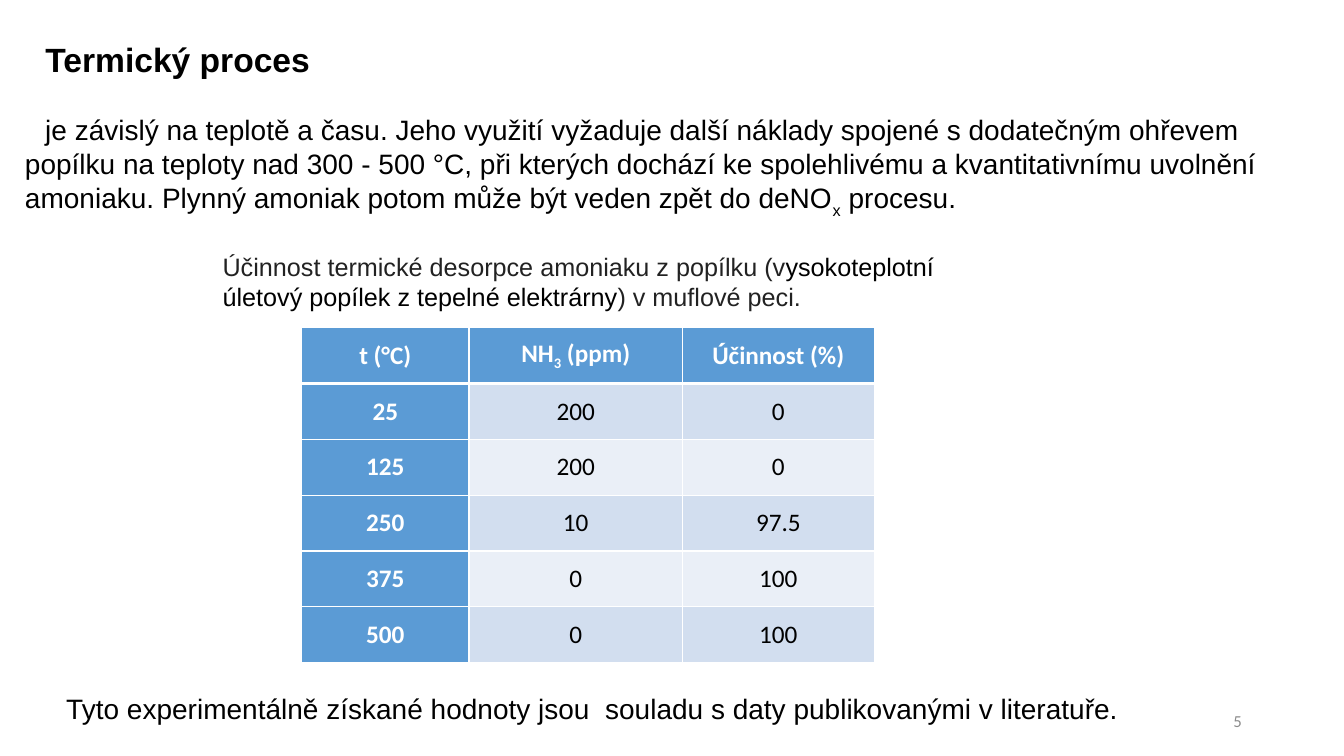
import pptx
import pptx.dml.color
import pptx.enum.text
import pptx.oxml
import pptx.oxml.ns
import pptx.util

Cm = pptx.util.Cm
Pt = pptx.util.Pt
RGBColor = pptx.dml.color.RGBColor
ALIGN = pptx.enum.text.PP_ALIGN
ANCHOR = pptx.enum.text.MSO_ANCHOR
AUTO_SIZE = pptx.enum.text.MSO_AUTO_SIZE

BLACK = RGBColor(0x00, 0x00, 0x00)
WHITE = RGBColor(0xFF, 0xFF, 0xFF)
CHARCOAL = RGBColor(0x22, 0x22, 0x22)
GREY = RGBColor(0x8C, 0x8C, 0x8C)
BLUE = RGBColor(0x5B, 0x9B, 0xD5)
BAND_DARK = RGBColor(0xD2, 0xDE, 0xEF)
BAND_LIGHT = RGBColor(0xEA, 0xEF, 0xF7)

TITLE_FONT = {"name": "Arial", "size": Pt(24), "bold": True}
BODY_FONT = {"name": "Arial", "size": Pt(20)}
CAPTION_FONT = {"name": "Arial", "size": Pt(18)}
TABLE_FONT = {"name": "Calibri", "size": Pt(18)}
NUMBER_FONT = {"name": "Calibri", "size": Pt(12)}

FIRST_LINE_INDENT = Cm(0.51)
COLUMN_WIDTHS = (Cm(4.22), Cm(5.38), Cm(4.83))
ROWS = (
    ("t (°C)", ("NH", "3", " (ppm)"), "Účinnost (%)"),
    ("25", "200", "0"),
    ("125", "200", "0"),
    ("250", "10", "97.5"),
    ("375", "0", "100"),
    ("500", "0", "100"),
)


def add_span(para, text, font, color=BLACK, baseline=None):
    """Add a run; baseline is a shift in thousandths of a percent."""
    span = para.add_run()
    span.text = text
    for name, value in font.items():
        setattr(span.font, name, value)
    span.font.color.rgb = color
    if baseline is not None:
        span._r.get_or_add_rPr().set("baseline", str(baseline))


def indent_first_line(para):
    properties = para._p.get_or_add_pPr()
    properties.set("marL", "0")
    properties.set("indent", str(FIRST_LINE_INDENT))


def add_box(page, box, wrap=True, anchor=ANCHOR.TOP):
    frame = page.shapes.add_textbox(*box).text_frame
    frame.word_wrap = wrap
    frame.vertical_anchor = anchor
    return frame.paragraphs[0]


def place_title(page, box):
    title = page.shapes.title
    for name, value in zip(("left", "top", "width", "height"), box):
        setattr(title, name, value)
    frame = title.text_frame
    frame.auto_size = AUTO_SIZE.NONE
    frame.vertical_anchor = ANCHOR.TOP
    para = frame.paragraphs[0]
    para.alignment = ALIGN.LEFT
    indent_first_line(para)
    add_span(para, "Termický proces", TITLE_FONT)


def add_description(page, box):
    para = add_box(page, box)
    indent_first_line(para)
    add_span(para, "je závislý na teplotě a času. Jeho využití vyžaduje další "
             "náklady spojené s dodatečným ohřevem popílku na teploty nad "
             "300 - 500 °C, při kterých dochází ke spolehlivému a "
             "kvantitativnímu uvolnění amoniaku. Plynný amoniak potom může "
             "být veden zpět do deNO", BODY_FONT)
    add_span(para, "x", BODY_FONT, baseline=-30000)
    add_span(para, " procesu.", BODY_FONT)


def add_caption(page, box):
    para = add_box(page, box)
    for text, color in (
        ("Účinnost termické desorpce amoniaku z popílku (v", CHARCOAL),
        ("ysokoteplotní úletový popílek z tepelné elektrárny", BLACK),
        (") v muflové peci.", CHARCOAL),
    ):
        add_span(para, text, CAPTION_FONT, color)


def set_borders(cell, top, bottom):
    """Draw white cell borders, with top and bottom widths in points."""
    properties = cell._tc.get_or_add_tcPr()
    edges = (("lnL", 1), ("lnR", 1), ("lnT", top), ("lnB", bottom))
    for index, (edge, width) in enumerate(edges):
        properties.insert(index, pptx.oxml.parse_xml(
            f'<a:{edge} {pptx.oxml.ns.nsdecls("a")} w="{Pt(width)}">'
            f'<a:solidFill><a:srgbClr val="{WHITE}"/></a:solidFill></a:{edge}>'))


def fill_cell(cell, content, row, column):
    is_heading = row == 0 or column == 0
    cell.fill.solid()
    band = BAND_DARK if row % 2 else BAND_LIGHT
    cell.fill.fore_color.rgb = BLUE if is_heading else band
    set_borders(cell, 3 if row == 1 else 1, 3 if row == 0 else 1)
    layout = {"vertical_anchor": ANCHOR.MIDDLE,
              "margin_left": Cm(0.13), "margin_right": Cm(0.13),
              "margin_top": 0, "margin_bottom": 0}
    for name, value in layout.items():
        setattr(cell, name, value)
    para = cell.text_frame.paragraphs[0]
    para.alignment = ALIGN.CENTER
    font = {**TABLE_FONT, "bold": is_heading}
    color = WHITE if is_heading else BLACK
    parts = (content,) if isinstance(content, str) else content
    for index, text in enumerate(parts):
        add_span(para, text, font, color, -25000 if index == 1 else None)


def add_efficiency_table(page, box):
    table = page.shapes.add_table(len(ROWS), len(COLUMN_WIDTHS), *box).table
    for column, width in zip(table.columns, COLUMN_WIDTHS):
        column.width = width
    for row, contents in enumerate(ROWS):
        for column, content in enumerate(contents):
            fill_cell(table.cell(row, column), content, row, column)


def add_conclusion(page, box):
    para = add_box(page, box, wrap=False)
    add_span(para, "Tyto experimentálně získané hodnoty jsou  souladu s daty "
             "publikovanými v literatuře.", BODY_FONT)


def add_page_number(page, box):
    para = add_box(page, box, anchor=ANCHOR.MIDDLE)
    para.alignment = ALIGN.RIGHT
    add_span(para, "5", NUMBER_FONT, GREY)


def main():
    deck = pptx.Presentation()
    deck.slide_width = Cm(33.87)
    deck.slide_height = Cm(19.05)
    page = deck.slides.add_slide(deck.slide_layouts.get_by_name("Title Only"))
    place_title(page, (Cm(0.38), Cm(0.86), Cm(32.31), Cm(1.3)))
    add_description(page, (Cm(0.38), Cm(2.72), Cm(32.31), Cm(2.84)))
    add_caption(page, (Cm(5.36), Cm(6.2), Cm(19.33), Cm(1.8)))
    add_efficiency_table(
        page, (Cm(7.6), Cm(8.26), sum(COLUMN_WIDTHS), Cm(8.44)))
    add_conclusion(page, (Cm(1.42), Cm(17.3), Cm(27.23), Cm(1.12)))
    add_page_number(page, (Cm(23.93), Cm(17.65), Cm(7.62), Cm(1.02)))
    deck.save("out.pptx")


if __name__ == "__main__":
    main()
